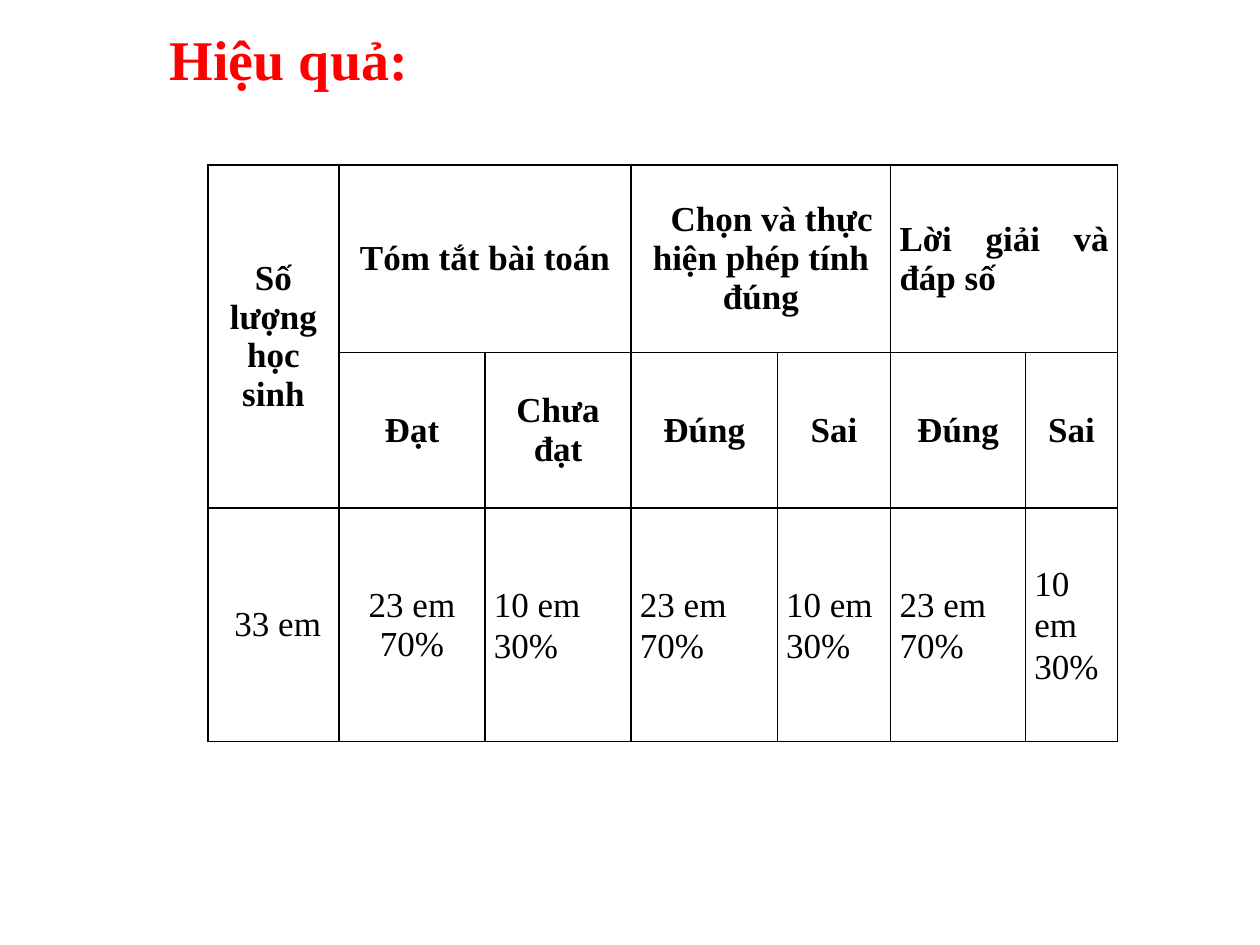
from pptx import Presentation
from pptx.dml.color import RGBColor
from pptx.enum.text import MSO_ANCHOR, MSO_AUTO_SIZE, PP_ALIGN
from pptx.oxml import parse_xml
from pptx.oxml.ns import nsdecls
from pptx.util import Inches, Pt

CENTER, JUSTIFY, LEFT = PP_ALIGN.CENTER, PP_ALIGN.JUSTIFY, PP_ALIGN.LEFT
MIDDLE = MSO_ANCHOR.MIDDLE
GROW = MSO_AUTO_SIZE.SHAPE_TO_FIT_TEXT
COLORS = {"title": "FF0000", "text": "000000", "border": "000000"}

COL_WIDTHS = [1.04, 1.16, 1.16, 1.16, 0.9, 1.07, 0.73]
ROW_HEIGHTS = [1.49, 0.99, 1.85]
ROWS = [
    ["Số lượng học sinh", "Tóm tắt bài toán", "",
     "Chọn và thực hiện phép tính đúng", "", "Lời giải và đáp số", ""],
    ["", "Đạt", "Chưa đạt", "Đúng", "Sai", "Đúng", "Sai"],
    [" 33 em", "23 em 70%"] + ["10 em 30%", "23 em 70%"] * 2 + ["10 em 30%"],
]
# First and last cell of each merged heading, as (row, column)
MERGES = [((0, 0), (1, 0)), ((0, 1), (0, 2)), ((0, 3), (0, 4)), ((0, 5), (0, 6))]


class SlideBuilder:
    font = "Times New Roman"
    body_size = 20
    title_size = 32

    def __init__(self, slide):
        self.s = slide

    def format_text(self, p, size, color, bold, align, indent=0):
        p.alignment = align
        if indent:
            p._p.get_or_add_pPr().set("indent", str(Inches(indent)))
        for r in p.runs:
            r.font.name = self.font
            r.font.size = Pt(size)
            r.font.bold = bold
            r.font.color.rgb = RGBColor.from_string(COLORS[color])

    def title(self, text, x, y, w, h):
        tf = self.s.shapes.add_textbox(Inches(x), Inches(y), Inches(w), Inches(h)).text_frame
        tf.word_wrap = True
        tf.auto_size = GROW
        tf.vertical_anchor = MIDDLE
        tf.text = text
        self.format_text(tf.paragraphs[0], self.title_size, "title", True, JUSTIFY, 0.5)

    def borders(self, cell):
        tc_pr = cell._tc.get_or_add_tcPr()
        for i, side in enumerate(("lnL", "lnR", "lnT", "lnB")):
            tc_pr.insert(i, parse_xml(
                f'<a:{side} {nsdecls("a")} w="{Pt(1)}"><a:solidFill>'
                f'<a:srgbClr val="{COLORS["border"]}"/></a:solidFill></a:{side}>'))

    def cell(self, cell, text, bold, align, indent, spacing):
        cell.fill.background()
        self.borders(cell)
        cell.vertical_anchor = MIDDLE
        cell.margin_left = cell.margin_right = Inches(0.07)
        cell.margin_top = cell.margin_bottom = 0
        if text:
            cell.text_frame.text = text
            p = cell.text_frame.paragraphs[0]
            p.space_before = p.space_after = Pt(6)
            p.line_spacing = spacing
            self.format_text(p, self.body_size, "text", bold, align, indent)

    def table(self, x, y):
        table = self.s.shapes.add_table(
            len(ROW_HEIGHTS), len(COL_WIDTHS), Inches(x), Inches(y),
            Inches(sum(COL_WIDTHS)), Inches(sum(ROW_HEIGHTS))).table
        table.first_row = table.horz_banding = False
        for column, width in zip(table.columns, COL_WIDTHS):
            column.width = Inches(width)
        for row, height in zip(table.rows, ROW_HEIGHTS):
            row.height = Inches(height)
        for first, last in MERGES:
            table.cell(*first).merge(table.cell(*last))
        for i, row in enumerate(ROWS):
            for j, text in enumerate(row):
                is_result = i == 2 and j > 1
                align = LEFT if is_result else JUSTIFY if (i, j) == (0, 5) else CENTER
                indent = 0.17 if (i, j) == (0, 3) else 0
                self.cell(table.cell(i, j), text, i < 2, align, indent,
                          1.07 if is_result else None)


def main():
    prs = Presentation()
    prs.slide_width, prs.slide_height = Inches(10), Inches(7.5)
    builder = SlideBuilder(prs.slides.add_slide(prs.slide_layouts[6]))

    # Results table
    builder.table(1.65, 1.31)
    # Heading
    builder.title("Hiệu quả:", 0.75, 0.14, 9.05, 0.64)

    prs.save("out.pptx")


if __name__ == "__main__":
    main()
